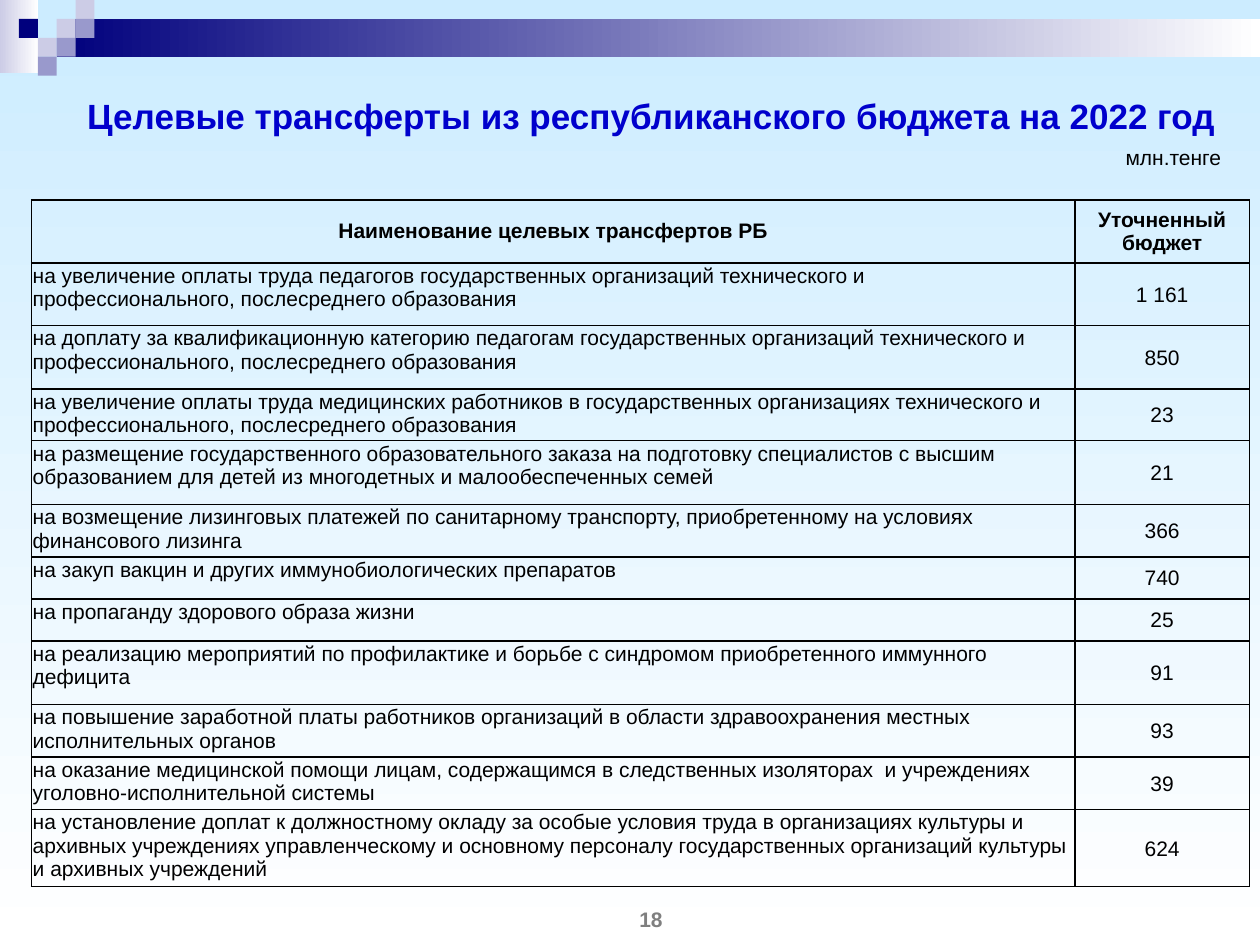
from lxml.etree import SubElement
from pptx import Presentation
from pptx.dml.color import RGBColor
from pptx.enum.shapes import MSO_SHAPE
from pptx.enum.text import MSO_ANCHOR, PP_ALIGN
from pptx.oxml.ns import qn
from pptx.util import Pt

BLACK = RGBColor(0x00, 0x00, 0x00)
WHITE = RGBColor(0xFF, 0xFF, 0xFF)
GRAY = RGBColor(0x7F, 0x7F, 0x7F)
TITLE_BLUE = RGBColor(0x00, 0x00, 0xCC)
NAVY = RGBColor(0x00, 0x00, 0x7D)
LAVENDER = RGBColor(0xCC, 0xCC, 0xE6)
VIOLET = RGBColor(0x99, 0x99, 0xCC)
SKY = RGBColor(0xCC, 0xEC, 0xFF)

TILE = 10.8
# Column, row and colour of each tile on the header grid
TILES = [
    (3, 1, LAVENDER), (4, 0, LAVENDER), (4, 1, VIOLET), (2, 2, LAVENDER),
    (1, 1, NAVY), (3, 2, VIOLET), (2, 3, VIOLET),
]

HEADER = ("Наименование целевых трансфертов РБ", "Уточненный бюджет", 34.3)
# Purpose, amount and row height
TRANSFERS = [
    ("на увеличение оплаты труда педагогов государственных организаций "
     "технического и профессионального, послесреднего образования", "1 161", 35.6),
    ("на доплату за квалификационную категорию педагогам государственных организаций "
     "технического и профессионального, послесреднего образования", "850", 36.4),
    ("на увеличение оплаты труда медицинских работников в государственных организациях "
     "технического и профессионального, послесреднего образования", "23", 27.6),
    ("на размещение государственного образовательного заказа на подготовку специалистов "
     "с высшим образованием для детей из многодетных и малообеспеченных семей", "21", 36.4),
    ("на возмещение лизинговых платежей по санитарному транспорту, приобретенному "
     "на условиях финансового лизинга", "366", 30),
    ("на закуп вакцин и других иммунобиологических препаратов", "740", 24),
    ("на пропаганду здорового образа жизни", "25", 24),
    ("на реализацию мероприятий по профилактике и борьбе с синдромом приобретенного "
     "иммунного дефицита", "91", 36.5),
    ("на повышение заработной платы работников организаций в области здравоохранения "
     "местных исполнительных органов", "93", 30),
    ("на оказание медицинской помощи лицам, содержащимся в следственных изоляторах  "
     "и учреждениях уголовно-исполнительной системы", "39", 30),
    ("на установление доплат к должностному окладу за особые условия труда в организациях "
     "культуры и архивных учреждениях управленческому и основному персоналу "
     "государственных организаций культуры и архивных учреждений", "624", 41.2),
]


def set_gradient(fill, start, end, angle):
    """Give a fill a linear gradient between two colours."""
    fill.gradient()
    fill.gradient_angle = angle
    for stop, color in zip(fill.gradient_stops, (start, end)):
        stop.color.rgb = color


def format_text(frame, size, color, bold=False, align=PP_ALIGN.CENTER):
    """Format every paragraph of a text frame alike."""
    for para in frame.paragraphs:
        para.alignment = align
        for span in para.runs:
            span.font.name = "Arial"
            span.font.size = Pt(size)
            span.font.bold = bold
            span.font.color.rgb = color


def add_rectangle(page, left, top, width, height, color, end=None):
    """Add a plain rectangle, filled solid or fading to the end colour."""
    box = page.shapes.add_shape(
        MSO_SHAPE.RECTANGLE, Pt(left), Pt(top), Pt(width), Pt(height))
    box.shadow.inherit = False
    box.line.fill.background()
    if end is None:
        box.fill.solid()
        box.fill.fore_color.rgb = color
    else:
        set_gradient(box.fill, color, end, 0)


def add_text(page, text, left, top, width, height, size, color, bold=False):
    """Add a centred, wrapping text box."""
    box = page.shapes.add_textbox(Pt(left), Pt(top), Pt(width), Pt(height))
    frame = box.text_frame
    frame.word_wrap = True
    frame.vertical_anchor = MSO_ANCHOR.MIDDLE
    frame.text = text
    format_text(frame, size, color, bold)


def set_borders(cell):
    """Draw a thin black line on all four sides of a cell."""
    properties = cell._tc.get_or_add_tcPr()
    for side in ("a:lnL", "a:lnR", "a:lnT", "a:lnB"):
        line = SubElement(properties, qn(side), w=str(Pt(1)))
        fill = SubElement(line, qn("a:solidFill"))
        SubElement(fill, qn("a:srgbClr"), val=str(BLACK))


def fill_cell(cell, text, is_header, is_amount):
    """Write and format one table cell."""
    side, top, bottom = (7.2, 3.6, 3.6) if is_header else (0.72, 0.72, 0)
    cell.margin_left = cell.margin_right = Pt(side)
    cell.margin_top, cell.margin_bottom = Pt(top), Pt(bottom)
    centred = is_header or is_amount
    cell.vertical_anchor = MSO_ANCHOR.MIDDLE if centred else MSO_ANCHOR.TOP
    set_borders(cell)
    cell.fill.background()
    cell.text_frame.text = text
    format_text(cell.text_frame, 12, BLACK, is_header,
                PP_ALIGN.CENTER if centred else PP_ALIGN.LEFT)


def add_transfer_table(page):
    """Add the table of transfers and their amounts."""
    rows = [HEADER] + TRANSFERS
    widths = (596.3, 99.6)
    table = page.shapes.add_table(
        len(rows), len(widths), Pt(18), Pt(114.3), Pt(sum(widths)),
        Pt(sum(row[2] for row in rows))).table
    table.first_row = table.horz_banding = False
    for column, width in zip(table.columns, widths):
        column.width = Pt(width)
    for row_index, (purpose, amount, height) in enumerate(rows):
        table.rows[row_index].height = Pt(height)
        for column_index, text in enumerate((purpose, amount)):
            fill_cell(table.cell(row_index, column_index), text,
                      row_index == 0, column_index == 1)


def add_header_band(page):
    """Add the gradient band and the tiles at the top left."""
    add_rectangle(page, 0, 0, 22, 41.8, LAVENDER, WHITE)
    add_rectangle(page, 3 * TILE, TILE, 720 - 3 * TILE, 2 * TILE, NAVY, WHITE)
    for column, row, color in TILES:
        add_rectangle(page, column * TILE, row * TILE, TILE, TILE, color)


def main():
    """Build the slide and save it."""
    deck = Presentation()
    deck.slide_width, deck.slide_height = Pt(720), Pt(540)
    page = deck.slides.add_slide(deck.slide_layouts[6])
    set_gradient(page.background.fill, SKY, WHITE, 270)
    add_header_band(page)
    add_text(page, "Целевые трансферты из республиканского бюджета на 2022 год",
             28.8, 41.8, 686.9, 48.2, 20, TITLE_BLUE, True)
    add_transfer_table(page)
    add_text(page, "млн.тенге", 627, 75, 87, 30, 12, BLACK)
    add_text(page, "18", 300, 510, 144, 30, 12, GRAY, True)
    deck.save("out.pptx")


main()
